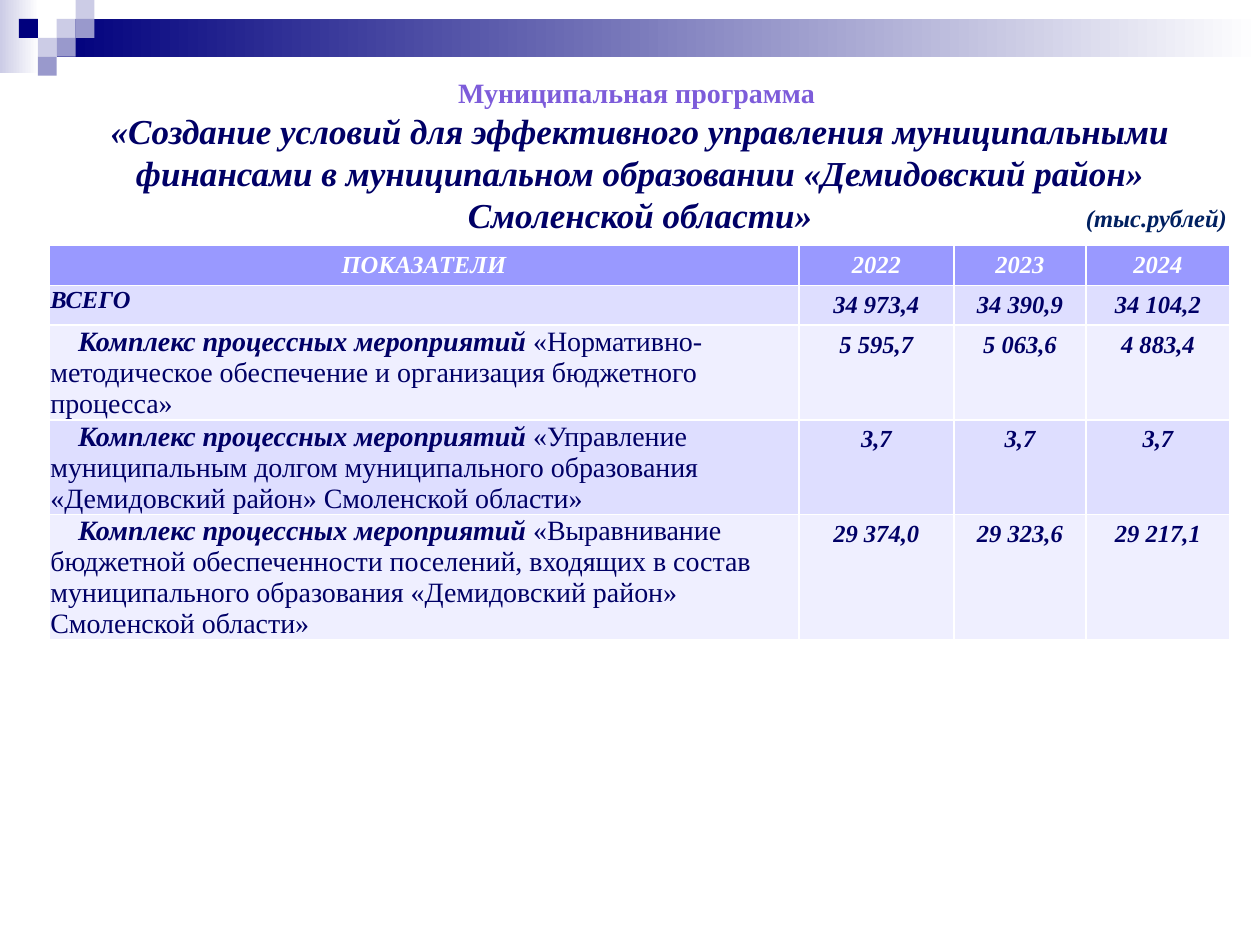
from pptx import Presentation
from pptx.dml.color import RGBColor
from pptx.enum.shapes import MSO_SHAPE
from pptx.enum.text import MSO_ANCHOR, MSO_AUTO_SIZE, PP_ALIGN
from pptx.util import Inches, Pt

COLORS = {
    "navy": "00007D", "lavender": "CCCCE6", "periwinkle": "9999CC",
    "white": "FFFFFF", "header": "9999FF", "band_dark": "DEDEFF",
    "band_light": "EFEFFF", "text": "000066", "program": "7D5CDA",
    "unit": "002060",
}
FONT = "Times New Roman"
GRID = 0.15
LEFT, WIDTH = 0.39, 9.38
SQUARES = [
    (3, 1, "lavender"), (4, 0, "lavender"), (4, 1, "periwinkle"),
    (2, 2, "lavender"), (1, 1, "navy"), (3, 2, "periwinkle"),
    (2, 3, "periwinkle"),
]
COLUMN_WIDTHS = [5.95, 1.23, 1.05, 1.14]
ROW_HEIGHTS = [0.31, 0.31, 0.75, 0.75, 0.99]
ACTIVITY = "Комплекс процессных мероприятий "
ROWS = [
    ("ПОКАЗАТЕЛИ", "2022", "2023", "2024"),
    ("ВСЕГО", "34 973,4", "34 390,9", "34 104,2"),
    ("«Нормативно-методическое обеспечение и организация бюджетного процесса»",
     "5 595,7", "5 063,6", "4 883,4"),
    ("«Управление муниципальным долгом муниципального образования "
     "«Демидовский район» Смоленской области»", "3,7", "3,7", "3,7"),
    ("«Выравнивание бюджетной обеспеченности поселений, входящих в состав "
     "муниципального образования «Демидовский район» Смоленской области»",
     "29 374,0", "29 323,6", "29 217,1"),
]


def color(name):
    return RGBColor.from_string(COLORS[name])


def add_text(paragraph, text, size=14, tint="text", bold=True, italic=True,
             align=PP_ALIGN.LEFT):
    paragraph.alignment = align
    run = paragraph.add_run()
    run.text = text
    font = run.font
    font.name, font.size = FONT, Pt(size)
    font.bold, font.italic = bold, italic
    font.color.rgb = color(tint)


def add_block(slide, left, top, width, height, start, end=None):
    shape = slide.shapes.add_shape(
        MSO_SHAPE.RECTANGLE, *map(Inches, (left, top, width, height)))
    shape.shadow.inherit = False
    shape.line.fill.background()
    if end is None:
        shape.fill.solid()
        shape.fill.fore_color.rgb = color(start)
        return
    shape.fill.gradient()
    shape.fill.gradient_angle = 0
    for stop, name in zip(shape.fill.gradient_stops, (start, end)):
        stop.color.rgb = color(name)


def add_banner(slide):
    add_block(slide, 0, 0, 0.31, 0.58, "lavender", "white")
    add_block(slide, 3 * GRID, GRID, 10 - 3 * GRID, 2 * GRID, "navy", "white")
    for column, row, name in SQUARES:
        add_block(slide, column * GRID, row * GRID, GRID, GRID, name)


def fill_title(slide):
    title = slide.shapes.title
    title.left, title.top = Inches(LEFT), Inches(0.55)
    title.width, title.height = Inches(WIDTH), Inches(1.38)
    frame = title.text_frame
    frame.auto_size = MSO_AUTO_SIZE.NONE
    frame.vertical_anchor = MSO_ANCHOR.TOP
    add_text(frame.paragraphs[0], "Муниципальная программа ", size=16,
             tint="program", italic=False, align=PP_ALIGN.CENTER)
    add_text(frame.add_paragraph(),
             "«Создание условий для эффективного управления муниципальными "
             "финансами в муниципальном образовании «Демидовский район» "
             "Смоленской области»", size=20, align=PP_ALIGN.CENTER)


def fill_label(cell, label, is_activity):
    cell.margin_left = cell.margin_right = cell.margin_top = Inches(0.01)
    cell.margin_bottom = 0
    paragraph = cell.text_frame.paragraphs[0]
    if is_activity:
        paragraph._p.get_or_add_pPr().set("indent", str(Inches(0.22)))
        add_text(paragraph, ACTIVITY, size=16)
        add_text(paragraph, label, size=16, bold=False, italic=False)
    else:
        add_text(paragraph, label)


def add_budget_table(slide):
    table = slide.shapes.add_table(
        len(ROWS), len(COLUMN_WIDTHS), Inches(LEFT), Inches(1.95),
        Inches(WIDTH), Inches(sum(ROW_HEIGHTS))).table
    for column, width in zip(table.columns, COLUMN_WIDTHS):
        column.width = Inches(width)
    for row, height in zip(table.rows, ROW_HEIGHTS):
        row.height = Inches(height)
    for row_index, values in enumerate(ROWS):
        is_header = row_index == 0
        band = "band_dark" if row_index % 2 else "band_light"
        for column_index, value in enumerate(values):
            cell = table.cell(row_index, column_index)
            cell.fill.solid()
            cell.fill.fore_color.rgb = color("header" if is_header else band)
            if column_index == 0 and not is_header:
                fill_label(cell, value, is_activity=row_index > 1)
            else:
                add_text(cell.text_frame.paragraphs[0], value,
                         tint="white" if is_header else "text",
                         align=PP_ALIGN.CENTER)


def add_unit_note(slide):
    box = slide.shapes.add_textbox(
        *map(Inches, (8.52, 1.56, 1.33, 0.34)))
    box.text_frame.word_wrap = False
    add_text(box.text_frame.paragraphs[0], "(тыс.рублей)", tint="unit")


def main():
    presentation = Presentation()
    presentation.slide_width = Inches(10)
    presentation.slide_height = Inches(7.5)
    slide = presentation.slides.add_slide(presentation.slide_layouts[5])
    add_banner(slide)
    add_budget_table(slide)
    fill_title(slide)
    add_unit_note(slide)
    presentation.save("out.pptx")


if __name__ == "__main__":
    main()
